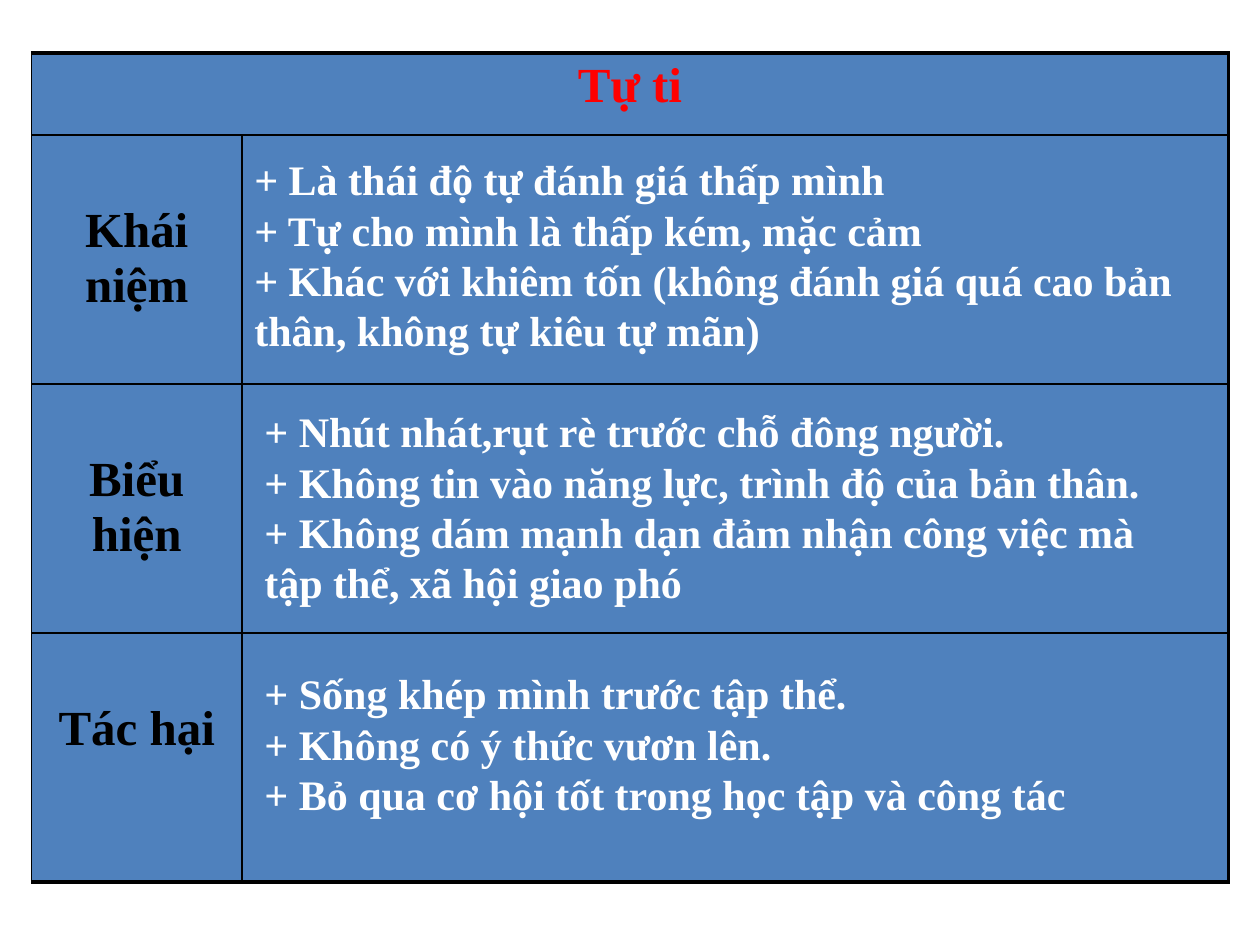
from dataclasses import dataclass

from lxml.etree import SubElement
from pptx import Presentation
from pptx.dml.color import RGBColor
from pptx.enum.text import MSO_AUTO_SIZE, PP_ALIGN
from pptx.oxml.ns import qn
from pptx.util import Inches, Pt


@dataclass(frozen=True)
class Theme:
    """Colours, type sizes and line widths of the slide."""
    font: str = "Times New Roman"
    heading: str = "FF0000"
    label: str = "000000"
    detail: str = "FFFFFF"
    cell: str = "4F81BD"
    border: str = "000000"
    heading_size: int = 28
    detail_size: int = 24
    thin: float = 1
    thick: float = 2.25


THEME = Theme()
HEADING = "Tự ti"
LABELS = ["Khái niệm", "Biểu hiện", "Tác hại"]
DETAILS = [
    ((1.92, 1.17, 7.58, 1.72), [
        "+ Là thái độ tự đánh giá thấp mình",
        "+ Tự cho mình là thấp kém, mặc cảm",
        "+ Khác với khiêm tốn (không đánh giá quá cao bản thân, "
        "không tự kiêu tự mãn)",
    ]),
    ((2, 3.17, 7.5, 1.72), [
        "+ Nhút nhát,rụt rè trước chỗ đông người.",
        "+ Không tin vào năng lực, trình độ của bản thân.",
        "+ Không dám mạnh dạn đảm nhận công việc mà tập thể, "
        "xã hội giao phó",
    ]),
    ((2, 5.25, 7.58, 1.31), [
        "+ Sống khép mình trước tập thể.",
        "+ Không có ý thức vươn lên.",
        "+ Bỏ qua cơ hội tốt trong học tập và công tác",
    ]),
]


def write(frame, lines, size, color, align):
    """Write bold paragraphs in one size and colour."""
    frame.text = "\n".join(lines)
    for paragraph in frame.paragraphs:
        paragraph.alignment = align
        for run in paragraph.runs:
            run.font.name = THEME.font
            run.font.size = Pt(size)
            run.font.bold = True
            run.font.color.rgb = RGBColor.from_string(color)


def style_cell(cell, widths):
    """Give a cell its four borders and its fill."""
    properties = cell._tc.get_or_add_tcPr()
    for side, width in widths.items():
        line = SubElement(properties, qn(f"a:ln{side}"), w=str(Pt(width)))
        fill = SubElement(line, qn("a:solidFill"))
        SubElement(fill, qn("a:srgbClr"), val=THEME.border)
    cell.fill.solid()
    cell.fill.fore_color.rgb = RGBColor.from_string(THEME.cell)


def add_grid(slide, box, label_width, heading_height):
    """Place the table with its heading row and label column."""
    left, top, width, height = box
    row_count = len(LABELS) + 1
    grid = slide.shapes.add_table(row_count, 2, *map(Inches, box)).table
    grid.first_row = grid.horz_banding = False
    grid.columns[0].width = Inches(label_width)
    grid.columns[1].width = Inches(width - label_width)
    grid.rows[0].height = Inches(heading_height)
    for row in range(1, row_count):
        grid.rows[row].height = Inches((height - heading_height) / len(LABELS))

    for row in range(row_count):
        for column in range(2):
            style_cell(grid.cell(row, column), {
                "L": THEME.thin,
                "R": THEME.thick if column == 1 or row == 0 else THEME.thin,
                "T": THEME.thick if row == 0 else THEME.thin,
                "B": THEME.thick if row == row_count - 1 else THEME.thin,
            })

    heading = grid.cell(0, 0)
    heading.merge(grid.cell(0, 1))
    write(heading.text_frame, [HEADING], THEME.heading_size, THEME.heading,
          PP_ALIGN.CENTER)
    for row, text in enumerate(LABELS, start=1):
        label = grid.cell(row, 0)
        label.margin_top = Inches(0.55)
        write(label.text_frame, [text], THEME.heading_size, THEME.label,
              PP_ALIGN.CENTER)


def add_details(slide, box, lines):
    """Place the points that explain one label."""
    frame = slide.shapes.add_textbox(*map(Inches, box)).text_frame
    frame.word_wrap = True
    frame.auto_size = MSO_AUTO_SIZE.SHAPE_TO_FIT_TEXT
    write(frame, lines, THEME.detail_size, THEME.detail, PP_ALIGN.LEFT)


def main():
    """Build and save the slide."""
    deck = Presentation()
    deck.slide_width, deck.slide_height = Inches(10), Inches(7.5)
    slide = deck.slides.add_slide(deck.slide_layouts[6])
    add_grid(slide, (0.25, 0.42, 9.5, 6.58), 1.67, 0.65)
    for box, lines in DETAILS:
        add_details(slide, box, lines)
    deck.save("out.pptx")


if __name__ == "__main__":
    main()
